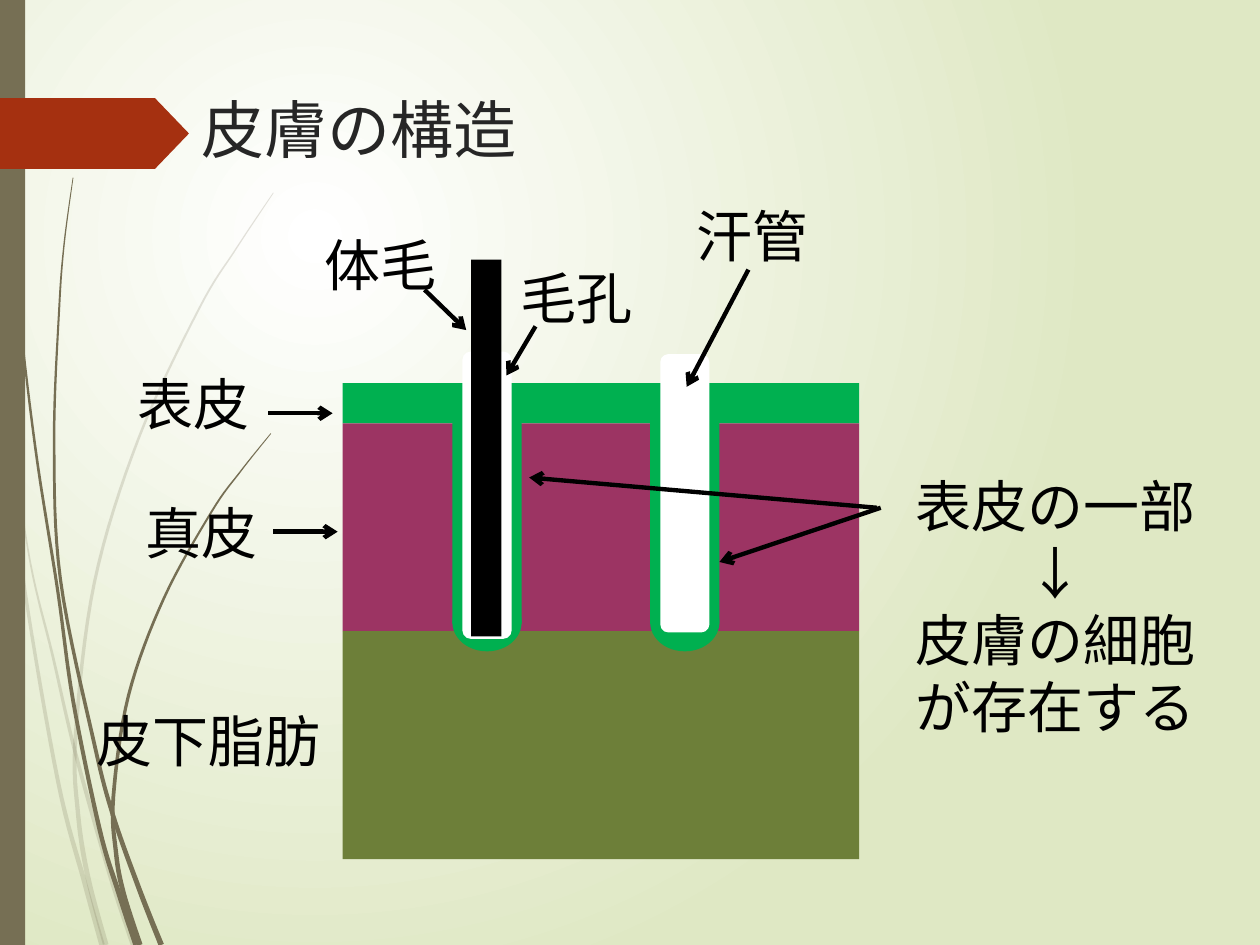
from dataclasses import dataclass
from math import hypot

from lxml import etree
from pptx import Presentation
from pptx.dml.color import RGBColor
from pptx.enum.shapes import MSO_CONNECTOR, MSO_SHAPE
from pptx.enum.text import MSO_ANCHOR, PP_ALIGN
from pptx.oxml.ns import qn
from pptx.util import Inches, Pt

RECT, OVAL = MSO_SHAPE.RECTANGLE, MSO_SHAPE.OVAL
ROUNDED, TAG = MSO_SHAPE.ROUNDED_RECTANGLE, MSO_SHAPE.PENTAGON
STRAIGHT = MSO_CONNECTOR.STRAIGHT
LEFT, CENTER = PP_ALIGN.LEFT, PP_ALIGN.CENTER
MIDDLE, TOP = MSO_ANCHOR.MIDDLE, MSO_ANCHOR.TOP


@dataclass(frozen=True)
class Theme:
    glow: str = "FFFFFF"
    field: str = "DFE8C4"
    stem: str = "766F54"
    tag: str = "A53010"
    title: str = "262626"
    ink: str = "000000"
    dermis: str = "9C3463"
    epidermis: str = "00B050"
    fat: str = "6D7F39"
    opening: str = "FFFFFF"
    title_font: str = "TeX Gyre Adventor"
    label_font: str = "Times New Roman"
    title_size: int = 36
    label_size: int = 32
    arrow_width: float = 2.5


THEME = Theme()

# Centre lines of the grass stems, from tip to root
PALE_STEMS = [
    [(0, 2.9), (0.06, 3.33), (0.12, 3.9), (0.2, 4.7), (0.46, 6.2), (0.67, 7), (0.81, 7.5)],
    [(0.09, 3.45), (0.24, 4.46), (0.42, 5.21), (0.6, 5.98), (0.87, 6.93), (1.06, 7.5)],
    [(2.17, 1.53), (1.87, 1.98), (1.58, 2.45), (1.1, 3.48), (0.75, 4.62), (0.6, 5.84),
     (0.62, 6.46), (0.7, 6.97), (0.84, 7.5)],
]
DARK_STEMS = [
    [(0.02, 0), (0.05, 1.1), (0.14, 2.33), (0.28, 3.55), (0.46, 4.7), (0.58, 5.56),
     (0.79, 6.58), (0.94, 7.08), (1.08, 7.5)],
    [(0.58, 1.41), (0.51, 1.93), (0.47, 2.45), (0.43, 3.49), (0.48, 4.6), (0.75, 5.91),
     (0.9, 6.48), (1.11, 7.07), (1.28, 7.5)],
    [(2.15, 3.44), (1.91, 3.74), (1.68, 4.06), (1.3, 4.75), (1.02, 5.52), (0.9, 6.32),
     (0.92, 6.76), (0.98, 7.09), (1.11, 7.5)],
]


def paint(shape, color):
    shape.shadow.inherit = False
    shape.fill.solid()
    shape.fill.fore_color.rgb = RGBColor.from_string(color)
    shape.line.fill.background()


def add_block(page, kind, left, top, width, height, color):
    shape = page.shapes.add_shape(
        kind, Inches(left), Inches(top), Inches(width), Inches(height))
    paint(shape, color)
    return shape


def write(frame, lines, font, size, color, align, anchor):
    """Put the lines in one paragraph, parted by line breaks."""
    frame.word_wrap = True
    frame.vertical_anchor = anchor
    para = frame.paragraphs[0]
    para.alignment = align
    for index, line in enumerate(lines):
        if index:
            para.add_line_break()
        span = para.add_run()
        span.text = line
        span.font.name, span.font.size = font, Pt(size)
        span.font.color.rgb = RGBColor.from_string(color)


def add_label(page, lines, left, top, width, height=0.64, align=LEFT):
    box = page.shapes.add_textbox(
        Inches(left), Inches(top), Inches(width), Inches(height))
    write(box.text_frame, lines, THEME.label_font, THEME.label_size,
          THEME.ink, align, TOP)


def add_arrow(page, start, end):
    arrow = page.shapes.add_connector(STRAIGHT, *map(Inches, start + end))
    arrow.line.color.rgb = RGBColor.from_string(THEME.ink)
    arrow.line.width = Pt(THEME.arrow_width)
    etree.SubElement(arrow.line._get_or_add_ln(), qn("a:tailEnd"), type="arrow")
    etree.SubElement(arrow._element.spPr, qn("a:effectLst"))


def smooth_curve(points, steps=8):
    """Sample a Catmull-Rom curve through the points."""
    padded = [points[0], *points, points[-1]]
    curve = []
    for a, b, c, d in zip(padded, padded[1:], padded[2:], padded[3:]):
        for step in range(steps):
            t = step / steps
            curve.append(tuple(
                q + t * (r - p) / 2 + t**2 * (2 * p - 5 * q + 4 * r - s) / 2
                + t**3 * (3 * q - p - 3 * r + s) / 2
                for p, q, r, s in zip(a, b, c, d)))
    return curve + [points[-1]]


def add_stem(page, points, color, opacity=100):
    """Draw a blade that widens from tip to root."""
    curve = smooth_curve(points)
    last = len(curve) - 1
    sides = [], []
    for index, (x, y) in enumerate(curve):
        before, after = curve[max(index - 1, 0)], curve[min(index + 1, last)]
        dx, dy = after[0] - before[0], after[1] - before[1]
        half = (0.003 + 0.019 * index / last) / hypot(dx, dy)
        sides[0].append((x - dy * half, y + dx * half))
        sides[1].append((x + dy * half, y - dx * half))
    outline = [(Inches(x), Inches(y)) for x, y in sides[0] + sides[1][::-1]]
    builder = page.shapes.build_freeform(*outline[0])
    builder.add_line_segments(outline[1:], close=True)
    stem = builder.convert_to_shape()
    paint(stem, color)
    if opacity < 100:
        tint = stem._element.spPr.find(".//" + qn("a:srgbClr"))
        etree.SubElement(tint, qn("a:alpha"), val=str(opacity * 1000))


def add_backdrop(page):
    fill = page.background.fill
    fill.gradient()
    for stop, place, color in zip(fill.gradient_stops, (0, 1), (THEME.glow, THEME.field)):
        stop.position = place
        stop.color.rgb = RGBColor.from_string(color)
    gradient = page._element.find(".//" + qn("a:gradFill"))
    gradient.remove(gradient.find(qn("a:lin")))
    circle = etree.SubElement(gradient, qn("a:path"), path="circle")
    etree.SubElement(circle, qn("a:fillToRect"),
                     l="50000", t="50000", r="100000", b="100000")
    for points in PALE_STEMS:
        add_stem(page, points, THEME.stem, opacity=20)
    for points in DARK_STEMS:
        add_stem(page, points, THEME.stem)
    add_block(page, RECT, 0, 0, 0.2, 7.5, THEME.stem)
    tag = add_block(page, TAG, 0, 0.78, 1.5, 0.56, THEME.tag)
    tag.adjustments[0] = 0.48


def add_title(page, left, top, width, height):
    title = page.shapes.title
    title.left, title.top = Inches(left), Inches(top)
    title.width, title.height = Inches(width), Inches(height)
    write(title.text_frame, ["皮膚の構造"], THEME.title_font, THEME.title_size,
          THEME.title, LEFT, MIDDLE)


def add_skin(page, left, top, width):
    """Stack the three layers, then sink the hair pore and the sweat duct."""
    layer_top = top
    for height, color in ((0.32, THEME.epidermis), (1.65, THEME.dermis), (1.81, THEME.fat)):
        add_block(page, RECT, left, layer_top, width, height, color)
        layer_top += height
    # offset of the sheath, then top and height of the opening
    for offset, opening_top, depth in ((0.87, -0.25, 2.28), (2.44, -0.23, 2.21)):
        x = left + offset
        add_block(page, RECT, x, top + 0.02, 0.55, 1.89, THEME.epidermis)
        add_block(page, OVAL, x, top + 1.67, 0.55, 0.46, THEME.epidermis)
        add_block(page, ROUNDED, x + 0.08, top + opening_top, 0.39, depth, THEME.opening)
    add_block(page, RECT, left + 1.02, top - 0.98, 0.24, 2.99, THEME.ink)


def add_part_names(page):
    for name, left, top, width in (
            ("表皮", 0.99, 2.88, 1.42), ("真皮", 1.06, 3.91, 1.26),
            ("皮下脂肪", 0.67, 5.56, 2.05), ("体毛", 2.48, 1.78, 1.42),
            ("毛孔", 4.03, 2.04, 1.42), ("汗管", 5.43, 1.55, 1.42)):
        add_label(page, [name], left, top, width)
    for start, end in (
            ((3.37, 2.3), (3.7, 2.62)), ((4.25, 2.59), (4.02, 2.98)),
            ((5.94, 2.14), (5.45, 3.07)), ((2.13, 3.28), (2.64, 3.28)),
            ((2.17, 4.22), (2.68, 4.22))):
        add_arrow(page, start, end)


def add_sheath_note(page, left, top, width, height):
    add_label(page, ["表皮の一部", "↓", "皮膚の細胞が存在する"],
              left, top, width, height, CENTER)
    add_arrow(page, (left + 0.03, top + 0.34), (left - 1.25, top + 0.77))
    add_arrow(page, (left, top + 0.34), (left - 2.76, top + 0.1))


def main():
    deck = Presentation()
    deck.slide_width, deck.slide_height = Inches(10), Inches(7.5)
    page = deck.slides.add_slide(deck.slide_layouts[5])
    add_backdrop(page)
    add_title(page, 1.5, 0.66, 3.74, 0.71)
    add_skin(page, 2.72, 3.04, 4.1)
    add_part_names(page)
    add_sheath_note(page, 6.96, 3.69, 2.84, 2.26)
    deck.save("out.pptx")


if __name__ == "__main__":
    main()
